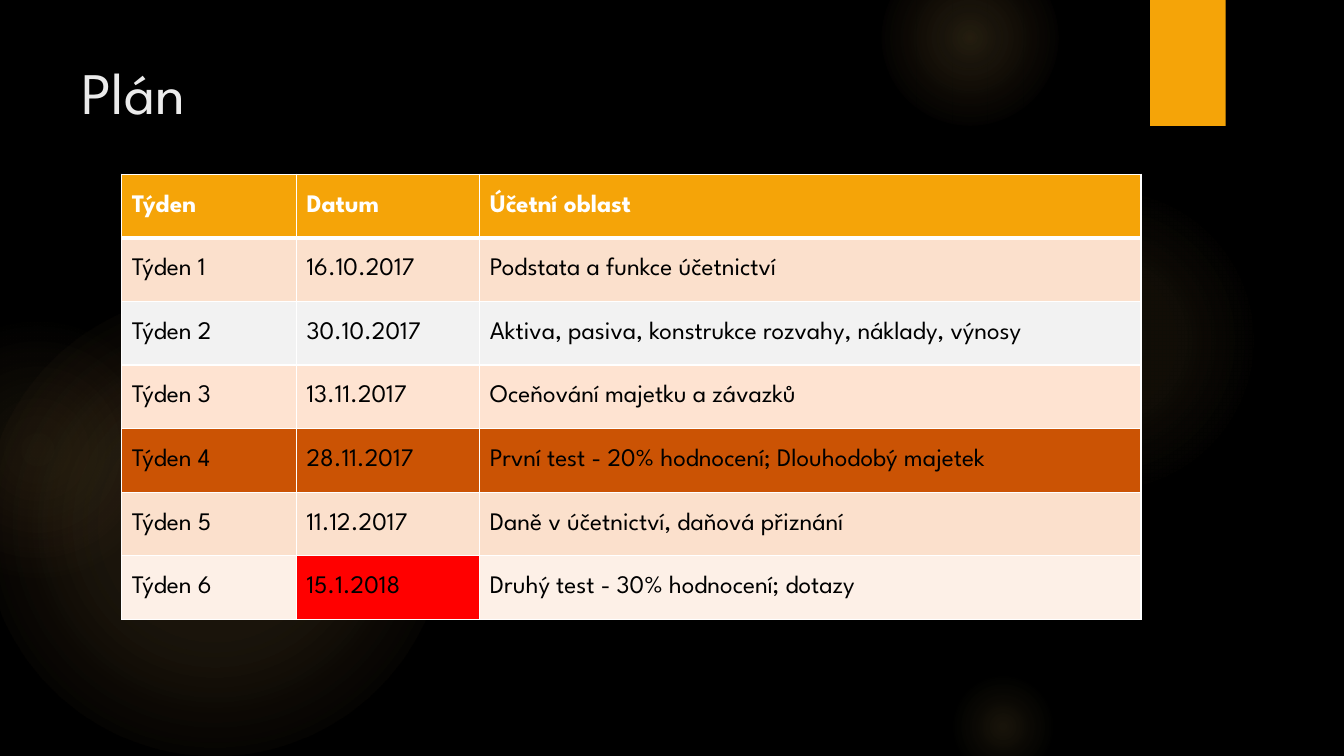
"""Build the course plan slide: a title, a week table and soft glows."""
from dataclasses import dataclass

from lxml import etree
from pptx import Presentation
from pptx import util as u
from pptx.dml import color
from pptx.enum import shapes, text
from pptx.oxml import ns


@dataclass(frozen=True)
class Theme:
    """Colours, font and type sizes."""
    face: str = "League Spartan"
    head: int = 42
    body: int = 18
    back: str = "000000"
    title: str = "EBEBEB"
    ink: str = "000000"
    white: str = "FFFFFF"
    gold: str = "F5A408"
    glow: str = "FAC96A"
    rose: str = "F59B74"
    peach: str = "FBE0CC"
    blush: str = "FEE3D1"
    grey: str = "F2F2F2"
    cream: str = "FDF0E7"
    rust: str = "CB5304"
    red: str = "FF0000"


def rgb(code):
    """Turn a hex code into a colour."""
    return color.RGBColor.from_string(code)


def apply(item, form):
    """Set attributes from a dict of format values."""
    for key, val in form.items():
        setattr(item, key, val)


def node(root, tag, **attrs):
    """Add a drawing element with attributes."""
    return etree.SubElement(root, ns.qn("a:" + tag), {k: str(v) for k, v in attrs.items()})


class Page:
    """Hold the theme and the slide, and draw each kind of element."""

    def __init__(self, deck, theme):
        """Add a titled slide with a plain backdrop."""
        self.theme = theme
        self.slide = deck.slides.add_slide(deck.slide_layouts[5])
        self.fill(self.slide.background, theme.back)

    def fill(self, item, code):
        """Fill an item with one colour."""
        item.fill.solid()
        item.fill.fore_color.rgb = rgb(code)

    def label(self, frame, words, size, code, bold=False):
        """Put styled words in a text frame."""
        frame.text = words
        font = frame.paragraphs[0].runs[0].font
        apply(font, {"name": self.theme.face, "size": u.Pt(size), "bold": bold})
        font.color.rgb = rgb(code)

    def title(self, words, box):
        """Place the title on top of the glows."""
        item = self.slide.shapes.title
        self.slide.shapes._spTree.append(item._element)
        apply(item, dict(zip(("left", "top", "width", "height"), map(u.Pt, box))))
        frame = item.text_frame
        self.label(frame, words, self.theme.head, self.theme.title)
        apply(frame, {"word_wrap": True, "vertical_anchor": text.MSO_ANCHOR.TOP})
        frame.paragraphs[0].alignment = text.PP_ALIGN.LEFT

    def shape(self, kind, box):
        """Add a preset shape without line or shadow."""
        item = self.slide.shapes.add_shape(kind, *map(u.Pt, box))
        item.shadow.inherit = False
        item.line.fill.background()
        return item

    def block(self, box, code):
        """Add a plain rectangle."""
        self.fill(self.shape(shapes.MSO_SHAPE.RECTANGLE, box), code)

    def glow(self, left, top, size, stops):
        """Add a circle that fades towards its rim."""
        item = self.shape(shapes.MSO_SHAPE.OVAL, (left, top, size, size))
        grad = etree.Element(ns.qn("a:gradFill"), rotWithShape="1")
        marks = node(grad, "gsLst")
        for pos, code, alpha in stops:
            tint = node(node(marks, "gs", pos=pos * 1000), "srgbClr", val=code)
            node(tint, "alpha", val=alpha * 1000)
        node(node(grad, "path", path="circle"), "fillToRect", l=50000, t=50000, r=50000, b=50000)
        item._element.spPr.find(ns.qn("a:prstGeom")).addnext(grad)

    def edge(self, cell, thick):
        """Rule a cell in white, with one thicker side where named."""
        props = cell._tc.get_or_add_tcPr()
        for spot, side in enumerate("LRTB"):
            line = node(props, "ln" + side, w=u.Pt(3 if side == thick else 1))
            node(node(line, "solidFill"), "srgbClr", val=self.theme.white)
            props.insert(spot, line)

    def table(self, left, top, cols, high, rows, fills):
        """Add the table, one fill per cell, with a bold first row."""
        box = (left, top, sum(cols), high * len(rows))
        grid = self.slide.shapes.add_table(len(rows), len(cols), *map(u.Pt, box)).table
        for col, wide in zip(grid.columns, cols):
            col.width = u.Pt(wide)
        for r, row in enumerate(rows):
            grid.rows[r].height = u.Pt(high)
            for c, words in enumerate(row):
                cell = grid.cell(r, c)
                ink = self.theme.ink if r else self.theme.white
                self.label(cell.text_frame, words, self.theme.body, ink, r == 0)
                cell.vertical_anchor = text.MSO_ANCHOR.MIDDLE
                self.fill(cell, fills[r][c])
                self.edge(cell, {0: "B", 1: "T"}.get(r))


def main():
    """Build and save the deck."""
    deck = Presentation()
    apply(deck, {"slide_width": u.Pt(960), "slide_height": u.Pt(540)})
    hue = Theme()
    page = Page(deck, hue)
    glows = [
        (-12, 210, 330, (11, 36, 10, 75), hue.glow),
        (-66, 228, 186, (8, 36, 5, 71), hue.rose),
        (677.5, 132, 222, (7, 36, 6, 69), hue.glow),
        (630, -36, 126, (14, 36, 7, 73), hue.glow),
        (677.5, 480, 78, (10, 31, 5, 66), hue.glow),
    ]
    for left, top, size, (core, mid, dim, rim), last in glows:
        page.glow(left, top, size, [(0, hue.glow, core), (mid, hue.glow, dim), (rim, last, 0)])
    page.block((821.5, 0, 54, 90), hue.gold)
    page.title("Plán", (51, 36, 741, 110))
    plan = [
        ("16.10.2017", "Podstata a funkce účetnictví"),
        ("30.10.2017", "Aktiva, pasiva, konstrukce rozvahy, náklady, výnosy"),
        ("13.11.2017", "Oceňování majetku a závazků"),
        ("28.11.2017", "První test - 20% hodnocení; Dlouhodobý majetek"),
        ("11.12.2017", "Daně v účetnictví, daňová přiznání"),
        ("15.1.2018", "Druhý test - 30% hodnocení; dotazy"),
    ]
    rows = [("Týden", "Datum", "Účetní oblast")]
    rows += [(f"Týden {week}", *rest) for week, rest in enumerate(plan, 1)]
    bands = (hue.gold, hue.peach, hue.grey, hue.blush, hue.rust, hue.peach, hue.cream)
    fills = [[band] * 3 for band in bands]
    fills[-1][1] = hue.red
    page.table(87, 124.5, (124.8, 131, 472.2), 45.43, rows, fills)
    deck.save("out.pptx")


if __name__ == "__main__":
    main()
